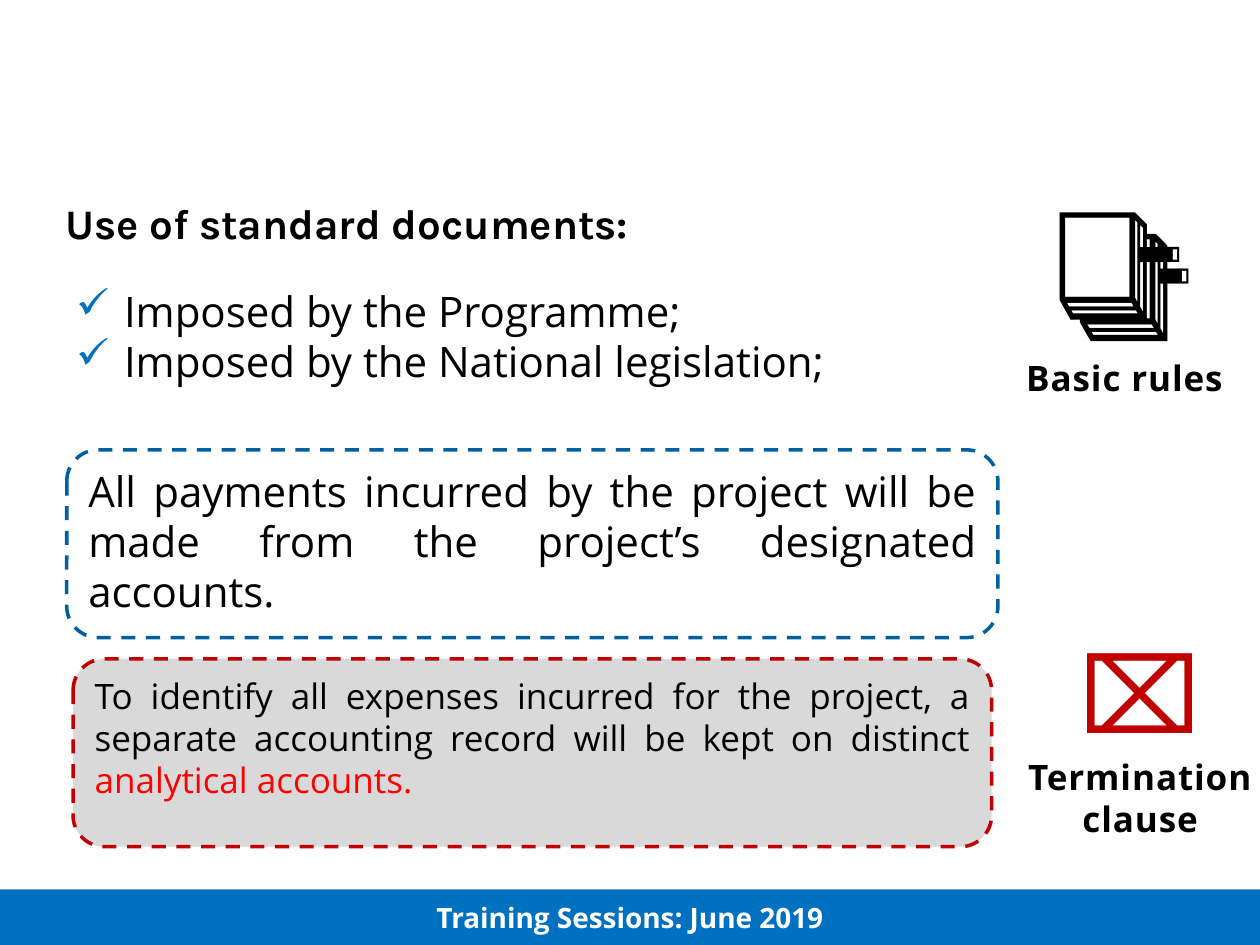
import pptx
import pptx.dml.color
import pptx.enum.dml
import pptx.enum.shapes
import pptx.enum.text
import pptx.oxml
import pptx.oxml.ns
import pptx.util
from pptx.util import Inches

COLOURS = {
    "black": "000000",
    "white": "FFFFFF",
    "blue": "0070C0",
    "deep_blue": "00609F",
    "dark_red": "C00000",
    "red": "FF0000",
    "grey": "D9D9D9",
}
ALIGN = pptx.enum.text.PP_ALIGN
ANCHOR = pptx.enum.text.MSO_ANCHOR
SHAPE = pptx.enum.shapes.MSO_SHAPE


def colour(name):
    """Return the named colour."""
    return pptx.dml.color.RGBColor.from_string(COLOURS[name])


def add_run(paragraph, text, size, ink="black", font="Open Sans", bold=False, spacing=0):
    """Append a styled run, with letter spacing in points."""
    run = paragraph.add_run()
    run.text = text
    run.font.size = pptx.util.Pt(size)
    run.font.name = font
    run.font.bold = bold
    run.font.color.rgb = colour(ink)
    if spacing:
        run.font._element.set("spc", str(int(spacing * 100)))


def add_panel(slide, box, preset, fill=None, outline=None):
    """Add a preset shape with optional fill and dashed outline."""
    panel = slide.shapes.add_shape(preset, *map(Inches, box))
    panel.shadow.inherit = False
    if fill:
        panel.fill.solid()
        panel.fill.fore_color.rgb = colour(fill)
    else:
        panel.fill.background()
    if outline:
        panel.line.color.rgb = colour(outline)
        panel.line.width = pptx.util.Pt(2)
        panel.line.dash_style = pptx.enum.dml.MSO_LINE.DASH
    else:
        panel.line.fill.background()
    panel.text_frame.word_wrap = True
    panel.text_frame.vertical_anchor = ANCHOR.TOP
    return panel.text_frame


def add_label(slide, box, text, size, align=ALIGN.CENTER, anchor=ANCHOR.MIDDLE, **style):
    """Add a one-run text box."""
    frame = slide.shapes.add_textbox(*map(Inches, box)).text_frame
    frame.word_wrap = True
    frame.vertical_anchor = anchor
    paragraph = frame.paragraphs[0]
    paragraph.alignment = align
    add_run(paragraph, text, size, **style)


def add_check_bullet(paragraph):
    """Give a paragraph a hanging blue check mark."""
    properties = paragraph._p.get_or_add_pPr()
    properties.set("marL", str(Inches(0.38)))
    properties.set("indent", str(Inches(-0.38)))
    namespace = pptx.oxml.ns.nsdecls("a")
    for xml in (
        f'<a:buClr {namespace}><a:srgbClr val="{COLOURS["blue"]}"/></a:buClr>',
        f'<a:buChar {namespace} char="✓"/>',
    ):
        properties.append(pptx.oxml.parse_xml(xml))


def add_footer(slide, box):
    """Add the session banner."""
    footer = add_panel(slide, box, SHAPE.RECTANGLE, fill="blue")
    footer.vertical_anchor = ANCHOR.MIDDLE
    footer.paragraphs[0].alignment = ALIGN.CENTER
    add_run(footer.paragraphs[0], "Training Sessions: June 2019", 16, "white", bold=True)


def add_checklist(slide, box, items):
    """Add the checked list of document sources."""
    checklist = add_panel(slide, box, SHAPE.ROUNDED_RECTANGLE)
    for index, item in enumerate(items):
        paragraph = checklist.add_paragraph() if index else checklist.paragraphs[0]
        paragraph.alignment = ALIGN.JUSTIFY
        add_check_bullet(paragraph)
        add_run(paragraph, item, 24)


def add_rule(slide, box, size, parts, outline, fill=None):
    """Add a dashed rule box from pairs of text and colour."""
    rule = add_panel(slide, box, SHAPE.ROUNDED_RECTANGLE, fill, outline)
    rule.paragraphs[0].alignment = ALIGN.JUSTIFY
    for text, ink in parts:
        add_run(rule.paragraphs[0], text, size, ink)


def add_marker(slide, symbol_box, symbol, size, ink, caption_box, caption):
    """Add a large symbol with its caption."""
    add_label(slide, symbol_box, symbol, size, anchor=ANCHOR.TOP, ink=ink, font="Arial")
    add_label(slide, caption_box, caption, 20, bold=True, spacing=0.5)


def main():
    """Build and save the slide."""
    deck = pptx.Presentation()
    deck.slide_width, deck.slide_height = Inches(10), Inches(7.5)
    slide = deck.slides.add_slide(deck.slide_layouts[6])

    add_footer(slide, (0, 7.06, 10, 0.44))
    add_label(slide, (0.42, 1.48, 6.77, 0.58), "Use of standard documents:", 24,
              align=ALIGN.LEFT, font="Karla", bold=True)
    add_checklist(slide, (0.44, 2.15, 6.61, 1.35),
                  ["Imposed by the Programme;", "Imposed by the National legislation;"])
    add_rule(slide, (0.53, 3.57, 7.39, 1.49), 24,
             [("All payments incurred by the project will be made from "
               "the project’s designated accounts.", "black")], "deep_blue")
    add_rule(slide, (0.58, 5.23, 7.29, 1.49), 20,
             [("To identify all expenses incurred for the project, a separate "
               "accounting record will be kept on distinct ", "black"),
              ("analytical accounts.", "red")], "dark_red", "grey")
    add_marker(slide, (8.23, 1.36, 1.39, 1.4), "📑", 80, "black",
               (8.04, 2.71, 1.77, 0.58), "Basic rules")
    add_marker(slide, (8.13, 4.94, 1.83, 1.1), "⌧", 60, "dark_red",
               (8.05, 6.04, 2, 0.58), "Termination clause")
    deck.save("out.pptx")


if __name__ == "__main__":
    main()
